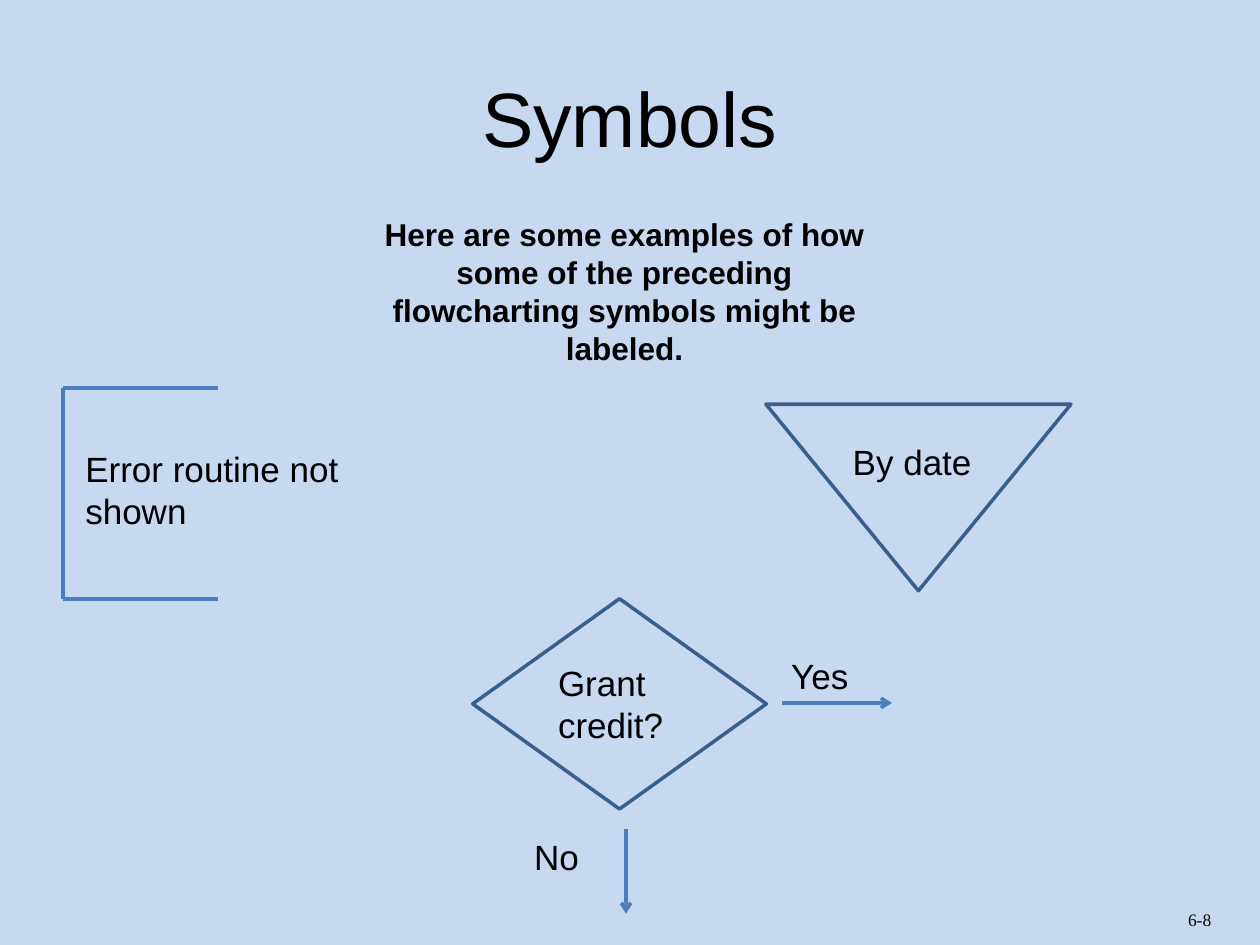
import pptx
import pptx.util
import pptx.dml.color
import pptx.enum.shapes
import pptx.enum.text
import pptx.oxml
import pptx.oxml.ns
from pptx.util import Cm

SHAPE = pptx.enum.shapes.MSO_SHAPE
ALIGN = pptx.enum.text.PP_ALIGN
ANCHOR = pptx.enum.text.MSO_ANCHOR

THEME = {
    "background": "C6D9F1",
    "text": "000000",
    "line": "4B7EBC",
    "outline": "3A5F8C",
    "line_width": 2,
    "styles": {
        "title": {"size": 44, "name": "Arial"},
        "intro": {"size": 18, "name": "Arial", "bold": True},
        "label": {"size": 20, "name": "Arial"},
        "page": {"size": 10, "name": "Times New Roman"},
    },
    "centred": ("title", "intro"),
}

# Positions are in centimetres: left, top, width, height
TEXTS = [
    ("page", "6-8", (23.7, 18.19, 1.7, 0.69)),
    ("title", "Symbols", (1.27, 0.76, 22.86, 3.18)),
    ("intro", "Here are some examples of how some of the preceding "
              "flowcharting symbols might be labeled.", (7.19, 4.22, 10.8, 3.33)),
    ("label", "Error routine not shown", (1.47, 8.89, 5.94, 1.96)),
    ("label", "By date", (16.94, 8.76, 3.18, 1.12)),
    ("label", "Grant credit?", (11, 13.21, 3.18, 1.96)),
    ("label", "Yes", (15.7, 13.06, 3.18, 1.12)),
    ("label", "No", (10.52, 16.71, 2.11, 1.12)),
]
SYMBOLS = [
    (SHAPE.FLOWCHART_MERGE, (15.44, 8.15, 6.15, 3.76)),
    (SHAPE.FLOWCHART_DECISION, (9.53, 12.07, 5.92, 4.24)),
]
ANNOTATION = {"left": 1.27, "right": 4.39, "top": 7.82, "bottom": 12.07}
ARROWS = [
    (15.77, 14.17, 17.98, 14.17),
    (12.62, 16.71, 12.62, 18.42),
]


def rgb(value):
    return pptx.dml.color.RGBColor.from_string(value)


def set_line(sp, colour):
    sp.line.color.rgb = rgb(colour)
    sp.line.width = pptx.util.Pt(THEME["line_width"])


def add_text(slide, style, text, box):
    tf = slide.shapes.add_textbox(*map(Cm, box)).text_frame
    tf.word_wrap = True
    if style == "title":
        tf.vertical_anchor = ANCHOR.MIDDLE
    p = tf.paragraphs[0]
    p.alignment = ALIGN.CENTER if style in THEME["centred"] else ALIGN.LEFT
    r = p.add_run()
    r.text = text
    r.font.color.rgb = rgb(THEME["text"])
    for key, value in THEME["styles"][style].items():
        setattr(r.font, key, pptx.util.Pt(value) if key == "size" else value)


def add_symbol(slide, kind, box):
    sp = slide.shapes.add_shape(kind, *map(Cm, box))
    sp.shadow.inherit = False
    sp.fill.background()
    set_line(sp, THEME["outline"])


def add_line(slide, ends, arrow=False):
    sp = slide.shapes.add_connector(
        pptx.enum.shapes.MSO_CONNECTOR.STRAIGHT, *map(Cm, ends))
    set_line(sp, THEME["line"])
    if arrow:
        head = pptx.oxml.ns.qn("a:tailEnd")
        ln = sp.line._get_or_add_ln()
        ln.append(ln.makeelement(head, {"type": "arrow"}))
    spPr = sp._element.spPr
    spPr.append(spPr.makeelement(pptx.oxml.ns.qn("a:effectLst"), {}))


def add_annotation(slide, left, right, top, bottom):
    """Draw the open bracket: one upright and two arms."""
    add_line(slide, (left, top, left, bottom))
    for y in (top, bottom):
        add_line(slide, (left, y, right, y))


def main():
    prs = pptx.Presentation()
    prs.slide_width, prs.slide_height = Cm(25.4), Cm(19.05)
    slide = prs.slides.add_slide(prs.slide_layouts[6])
    slide.background.fill.solid()
    slide.background.fill.fore_color.rgb = rgb(THEME["background"])

    add_annotation(slide, **ANNOTATION)
    for kind, box in SYMBOLS:
        add_symbol(slide, kind, box)
    for ends in ARROWS:
        add_line(slide, ends, arrow=True)
    for style, text, box in TEXTS:
        add_text(slide, style, text, box)
    prs.save("out.pptx")


if __name__ == "__main__":
    main()
